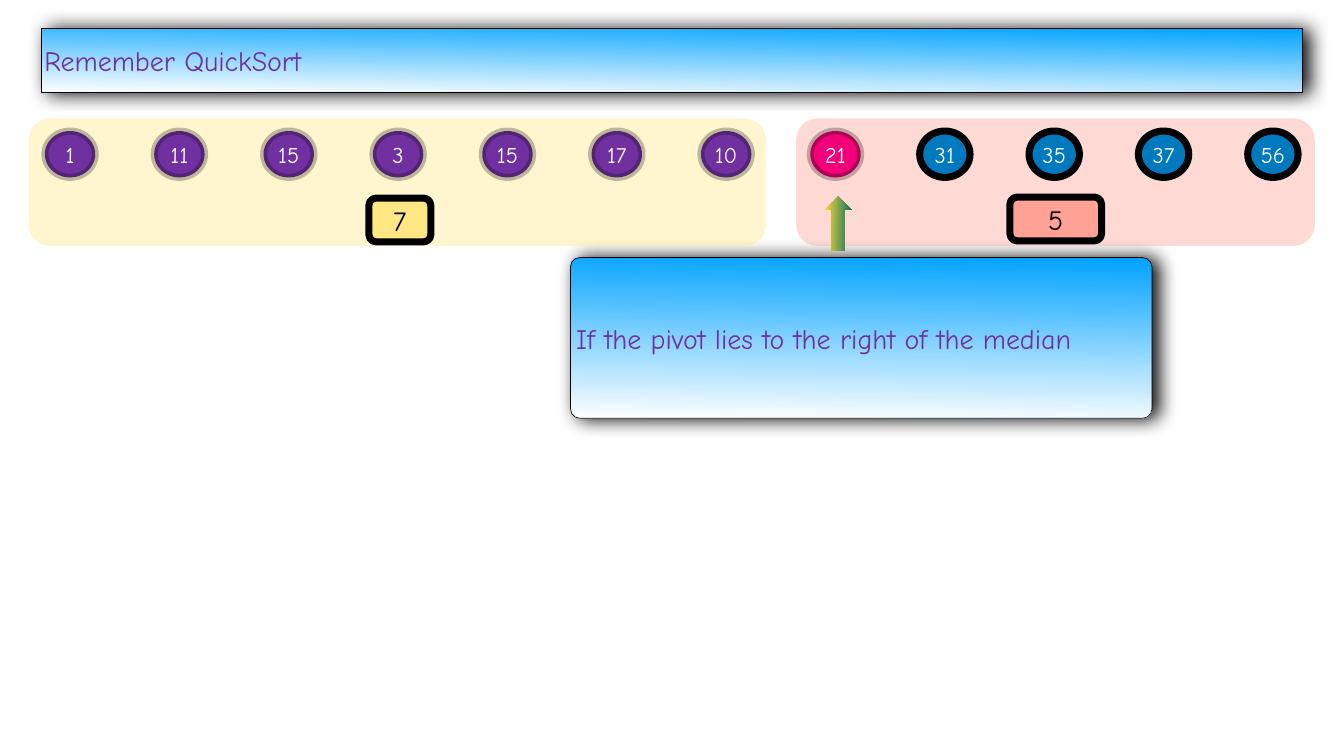
from lxml import etree
from pptx import Presentation
from pptx.dml.color import RGBColor
from pptx.enum.shapes import MSO_SHAPE
from pptx.enum.text import MSO_ANCHOR, PP_ALIGN
from pptx.oxml import parse_xml
from pptx.oxml.ns import nsdecls, qn
from pptx.util import Inches, Pt

ROUNDED, OVAL, ARROW = MSO_SHAPE.ROUNDED_RECTANGLE, MSO_SHAPE.OVAL, MSO_SHAPE.RIGHT_ARROW
LEFT, CENTER, MIDDLE = PP_ALIGN.LEFT, PP_ALIGN.CENTER, MSO_ANCHOR.MIDDLE

FONT = "Comic Neue"
COLORS = {
    "black": "000000", "white": "FFFFFF", "sky": "00A2FF", "purple": "7030A0",
    "pivot": "F10079", "blue": "0079BF", "yellow": "FFE884", "salmon": "FFA295",
    "gold": "FFD932", "teal": "0B7468",
}


def paint(shape, fill, line=None, line_width=10, fill_alpha=100, line_alpha=100):
    """Fill with one colour, or a downward gradient for a pair; alphas in percent."""
    shape.shadow.inherit = False
    if isinstance(fill, tuple):
        shape.fill.gradient()
        shape.fill.gradient_angle = 269
        for stop, name in zip(shape.fill.gradient_stops, fill):
            stop.color.rgb = RGBColor.from_string(COLORS[name])
    else:
        shape.fill.solid()
        shape.fill.fore_color.rgb = RGBColor.from_string(COLORS[fill])
    if line:
        shape.line.width = Pt(line_width)
        shape.line.color.rgb = RGBColor.from_string(COLORS[line])
    else:
        shape.line.fill.background()
    properties = shape.fill._xPr
    for parent, alpha in ((properties, fill_alpha), (properties.find(qn("a:ln")), line_alpha)):
        if alpha < 100:
            color = parent.find(qn("a:solidFill"))[0]
            etree.SubElement(color, qn("a:alpha")).set("val", str(alpha * 1000))


def write(shape, text, size, color, align=CENTER, wrap=False):
    frame = shape.text_frame
    frame.text = text
    frame.word_wrap = wrap
    frame.vertical_anchor = MIDDLE
    frame.margin_left = frame.margin_right = Inches(0.06)
    frame.margin_top = frame.margin_bottom = Inches(0.06)
    paragraph = frame.paragraphs[0]
    paragraph.alignment = align
    paragraph.font.name = FONT
    paragraph.font.size = Pt(size)
    paragraph.font.color.rgb = RGBColor.from_string(COLORS[color])


presentation = Presentation()
presentation.slide_width, presentation.slide_height = Inches(26.67), Inches(15)
slide = presentation.slides.add_slide(presentation.slide_layouts[5])
shapes = slide.shapes

# Grid of the twelve numbers
FIRST_COLUMN, PITCH = 0.89, 2.17
NUMBER_TOP, NUMBER_WIDTH, NUMBER_HEIGHT = 2.6, 1, 0.92
PANEL_TOP, PANEL_HEIGHT = 2.35, 2.53

# Title banner and explanation
title = shapes.title
title.left, title.top, title.width, title.height = map(Inches, (0.82, 0.56, 25.03, 1.27))
title._element.spPr.append(parse_xml(
    f'<a:prstGeom {nsdecls("a")} prst="roundRect"><a:avLst>'
    '<a:gd name="adj" fmla="val 5900"/></a:avLst></a:prstGeom>'))
explanation = shapes.add_shape(ROUNDED, *map(Inches, (11.32, 5.11, 11.54, 3.19)))
explanation.adjustments[0] = 0.059
for banner, text in ((title, "Remember QuickSort"),
                     (explanation, "If the pivot lies to the right of the median")):
    paint(banner, ("sky", "white"), "black", 1)
    write(banner, text, 40, "purple", LEFT, wrap=True)
    banner._element.spPr.find(qn("a:effectLst")).append(parse_xml(
        f'<a:outerShdw {nsdecls("a")} blurRad="{Pt(28)}" dist="{Pt(9)}" dir="0" rotWithShape="0">'
        '<a:srgbClr val="000000"><a:alpha val="97000"/></a:srgbClr></a:outerShdw>'))

# The two partitions, each with its number count
for left, width, color, count, count_box in (
        (0.57, 14.63, "yellow", "7", (7.32, 3.93, 1.23, 0.87)),
        (15.8, 10.29, "salmon", "5", (20.04, 3.91, 1.82, 0.87))):
    panel = shapes.add_shape(ROUNDED, *map(Inches, (left, PANEL_TOP, width, PANEL_HEIGHT)))
    paint(panel, color, fill_alpha=39)
    counter = shapes.add_shape(ROUNDED, *map(Inches, count_box))
    paint(counter, color, "black")
    write(counter, count, 40, "black")

# Numbers: smaller ones, the pivot, larger ones
numbers = [(value, "purple", 26) for value in (1, 11, 15, 3, 15, 17, 10)]
numbers += [(21, "pivot", 26)]
numbers += [(value, "blue", 100) for value in (31, 35, 37, 56)]
for column, (value, color, ring_alpha) in enumerate(numbers):
    number = shapes.add_shape(OVAL, Inches(FIRST_COLUMN + column * PITCH), Inches(NUMBER_TOP),
                              Inches(NUMBER_WIDTH), Inches(NUMBER_HEIGHT))
    paint(number, color, "black", line_alpha=ring_alpha)
    write(number, str(value), 32, "white")

# Arrow up to the pivot
pivot_arrow = shapes.add_shape(ARROW, *map(Inches, (16.1, 4.17, 1.07, 0.53)))
pivot_arrow.rotation = 270
paint(pivot_arrow, ("gold", "teal"))

presentation.save("out.pptx")
